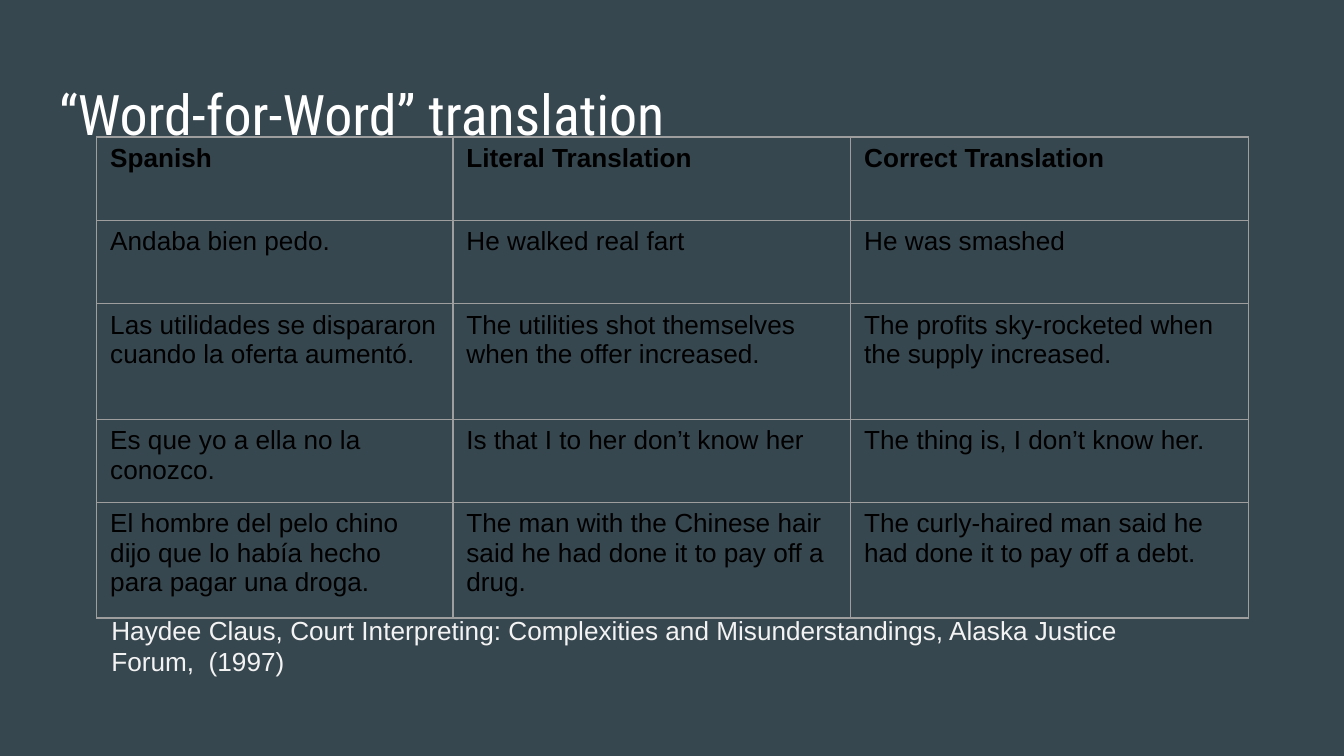
import pptx
import pptx.util
import pptx.dml.color
import pptx.enum.text
import pptx.oxml
import pptx.oxml.ns
from dataclasses import dataclass
from lxml import etree

Inches, Pt = pptx.util.Inches, pptx.util.Pt


@dataclass(frozen=True)
class Theme:
    background: str = "37474F"
    title_color: str = "FFFFFF"
    credit_color: str = "F3F3F3"
    table_color: str = "000000"
    border_color: str = "9E9E9E"
    title_font: str = "Roboto Condensed"
    body_font: str = "Arial"
    title_size: int = 30
    body_size: int = 14
    border_width: float = 0.75


class SlideBuilder:
    def __init__(self, prs, theme):
        self.theme = theme
        self.slide = prs.slides.add_slide(prs.slide_layouts[5])
        fill = self.slide.background.fill
        fill.solid()
        fill.fore_color.rgb = pptx.dml.color.RGBColor.from_string(theme.background)

    def format_text(self, tf, text, font, size, color, bold=False):
        tf.text = text
        tf.word_wrap = True
        for p in tf.paragraphs:
            p.alignment = pptx.enum.text.PP_ALIGN.LEFT
            for r in p.runs:
                r.font.name = font
                r.font.size = Pt(size)
                r.font.bold = bold
                r.font.color.rgb = pptx.dml.color.RGBColor.from_string(color)

    def set_frame(self, tf):
        tf.auto_size = pptx.enum.text.MSO_AUTO_SIZE.NONE
        tf.vertical_anchor = pptx.enum.text.MSO_ANCHOR.TOP
        tf.margin_left = tf.margin_right = Inches(0.1)
        tf.margin_top = tf.margin_bottom = Inches(0.1)

    def title(self, text, left, top, width, height):
        sp = self.slide.shapes.title
        sp.left, sp.top = Inches(left), Inches(top)
        sp.width, sp.height = Inches(width), Inches(height)
        self.set_frame(sp.text_frame)
        t = self.theme
        self.format_text(sp.text_frame, text, t.title_font, t.title_size, t.title_color)

    def text(self, text, left, top, width, height):
        sp = self.slide.shapes.add_textbox(
            Inches(left), Inches(top), Inches(width), Inches(height))
        self.set_frame(sp.text_frame)
        t = self.theme
        self.format_text(sp.text_frame, text, t.body_font, t.body_size, t.credit_color)

    def cell_borders(self, cell):
        tc_pr = cell._tc.get_or_add_tcPr()
        for i, side in enumerate(("lnL", "lnR", "lnT", "lnB")):
            ln = etree.Element(pptx.oxml.ns.qn(f"a:{side}"),
                               w=str(int(Pt(self.theme.border_width))))
            fill = etree.SubElement(ln, pptx.oxml.ns.qn("a:solidFill"))
            etree.SubElement(fill, pptx.oxml.ns.qn("a:srgbClr"),
                             val=self.theme.border_color)
            tc_pr.insert(i, ln)

    def table(self, rows, left, top, col_widths, row_heights):
        t = self.theme
        table = self.slide.shapes.add_table(
            len(rows), len(col_widths), Inches(left), Inches(top),
            Inches(sum(col_widths)), Inches(sum(row_heights))).table
        table.first_row = table.horz_banding = False
        for col, width in zip(table.columns, col_widths):
            col.width = Inches(width)
        for row, height in zip(table.rows, row_heights):
            row.height = Inches(height)
        for i, row in enumerate(rows):
            for j, text in enumerate(row):
                cell = table.cell(i, j)
                cell.fill.background()
                self.cell_borders(cell)
                self.format_text(cell.text_frame, text, t.body_font, t.body_size,
                                 t.table_color, bold=i == 0)


TRANSLATIONS = [
    ("Spanish", "Literal Translation", "Correct Translation"),
    ("Andaba bien pedo.", "He walked real fart", "He was smashed"),
    ("Las utilidades se dispararon cuando la oferta aumentó.",
     "The utilities shot themselves when the offer increased.",
     "The profits sky-rocketed when the supply increased."),
    ("Es que yo a ella no la conozco.",
     "Is that I to her don’t know her",
     "The thing is, I don’t know her."),
    ("El hombre del pelo chino dijo que lo había hecho para pagar una droga.",
     "The man with the Chinese hair said he had done it to pay off a drug.",
     "The curly-haired man said he had done it to pay off a debt."),
]


def main():
    # Widescreen 16:9 slide
    prs = pptx.Presentation()
    prs.slide_width = Inches(10)
    prs.slide_height = prs.slide_width * 9 // 16
    s = SlideBuilder(prs, Theme())

    # Title
    s.title("“Word-for-Word” translation", 0.34, 0.49, 9.32, 0.63)

    # Source credit
    s.text("Haydee Claus, Court Interpreting: Complexities and Misunderstandings, "
           "Alaska Justice Forum,  (1997)", 0.73, 4.47, 7.92, 0.81)

    # Translation table
    short, tall = 0.62, 0.86
    s.table(TRANSLATIONS, 0.72, 1.02, (2.65, 2.96, 2.96),
            (short, short, tall, short, tall))

    prs.save("out.pptx")


if __name__ == "__main__":
    main()
